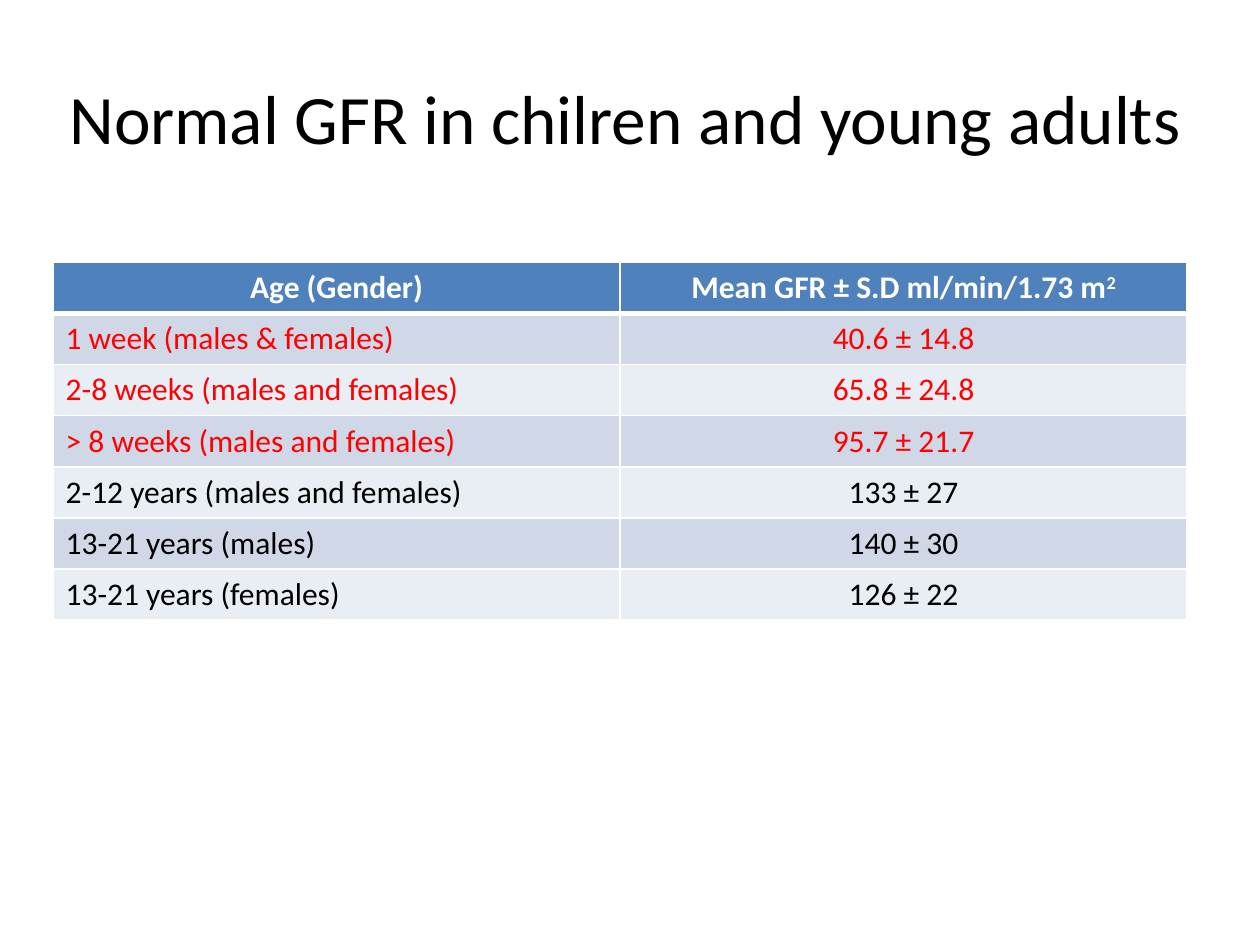
from typing import NamedTuple

from lxml.etree import SubElement
from pptx import Presentation
from pptx.dml.color import RGBColor
from pptx.enum.text import MSO_ANCHOR as Anchor, PP_ALIGN as Align
from pptx.oxml.ns import qn
from pptx.util import Cm, Pt

COLORS = {
    "white": "FFFFFF",
    "black": "000000",
    "red": "FF0000",
    "header": "4F81BD",
    "odd_row": "D0D8E8",
    "even_row": "E9EDF4",
}
FONT = "Calibri"
ROW_HEIGHT = Cm(1.03)
COLUMN_WIDTH = Cm(11.43)
THIN, THICK = Pt(1), Pt(3)


class AgeGroup(NamedTuple):
    age: str
    gfr: str
    color: str = "black"


AGE_GROUPS = [
    AgeGroup("1 week (males & females)", "40.6 ± 14.8", "red"),
    AgeGroup("2-8 weeks (males and females)", "65.8 ± 24.8", "red"),
    AgeGroup("> 8 weeks (males and females)", "95.7 ± 21.7", "red"),
    AgeGroup("2-12 years (males and females)", "133 ± 27"),
    AgeGroup("13-21 years (males)", "140 ± 30"),
    AgeGroup("13-21 years (females)", "126 ± 22"),
]


def rgb(name: str) -> RGBColor:
    return RGBColor.from_string(COLORS[name])


def style_paragraph(paragraph, size: float, color: str, align: Align, bold: bool = False) -> None:
    paragraph.alignment = align
    font = paragraph.font
    font.name, font.size, font.bold = FONT, Pt(size), bold
    font.color.rgb = rgb(color)


def set_borders(cell, top: int, bottom: int) -> None:
    properties = cell._tc.get_or_add_tcPr()
    for side, width in (("L", THIN), ("R", THIN), ("T", top), ("B", bottom)):
        line = SubElement(properties, qn(f"a:ln{side}"), w=str(width))
        SubElement(SubElement(line, qn("a:solidFill")), qn("a:srgbClr"), val=COLORS["white"])


def fill_cell(cell, text: str, fill: str, color: str, align: Align,
              bold: bool = False, top: int = THIN, bottom: int = THIN) -> None:
    set_borders(cell, top, bottom)
    cell.fill.solid()
    cell.fill.fore_color.rgb = rgb(fill)
    cell.text = text
    style_paragraph(cell.text_frame.paragraphs[0], 18, color, align, bold)


def add_title(slide, text: str) -> None:
    frame = slide.shapes.add_textbox(Cm(0.64), Cm(0.76), Cm(23.93), Cm(3.18)).text_frame
    frame.word_wrap = True
    frame.vertical_anchor = Anchor.MIDDLE
    frame.text = text
    style_paragraph(frame.paragraphs[0], 39.6, "black", Align.CENTER)


def add_gfr_table(slide, groups: list[AgeGroup]) -> None:
    row_count = len(groups) + 1
    table = slide.shapes.add_table(row_count, 2, Cm(1.07), Cm(5.29),
                                   COLUMN_WIDTH * 2, ROW_HEIGHT * row_count).table
    for row in table.rows:
        row.height = ROW_HEIGHT

    # Header row, with the exponent of the unit raised
    for column, heading in enumerate(("Age (Gender)", "Mean GFR ± S.D ml/min/1.73 m")):
        fill_cell(table.cell(0, column), heading, "header", "white", Align.CENTER,
                  bold=True, bottom=THICK)
    exponent = table.cell(0, 1).text_frame.paragraphs[0].add_run()
    exponent.text = "2"
    exponent.font._element.set("baseline", "30000")

    # One banded row for each age group
    for number, group in enumerate(groups, start=1):
        band = "odd_row" if number % 2 else "even_row"
        top = THICK if number == 1 else THIN
        fill_cell(table.cell(number, 0), group.age, band, group.color, Align.LEFT, top=top)
        fill_cell(table.cell(number, 1), group.gfr, band, group.color, Align.CENTER, top=top)


def main() -> None:
    deck = Presentation()
    deck.slide_width, deck.slide_height = Cm(25.4), Cm(19.05)
    slide = deck.slides.add_slide(deck.slide_layouts[6])
    add_title(slide, "Normal GFR in chilren and young adults")
    add_gfr_table(slide, AGE_GROUPS)
    deck.save("out.pptx")


if __name__ == "__main__":
    main()
